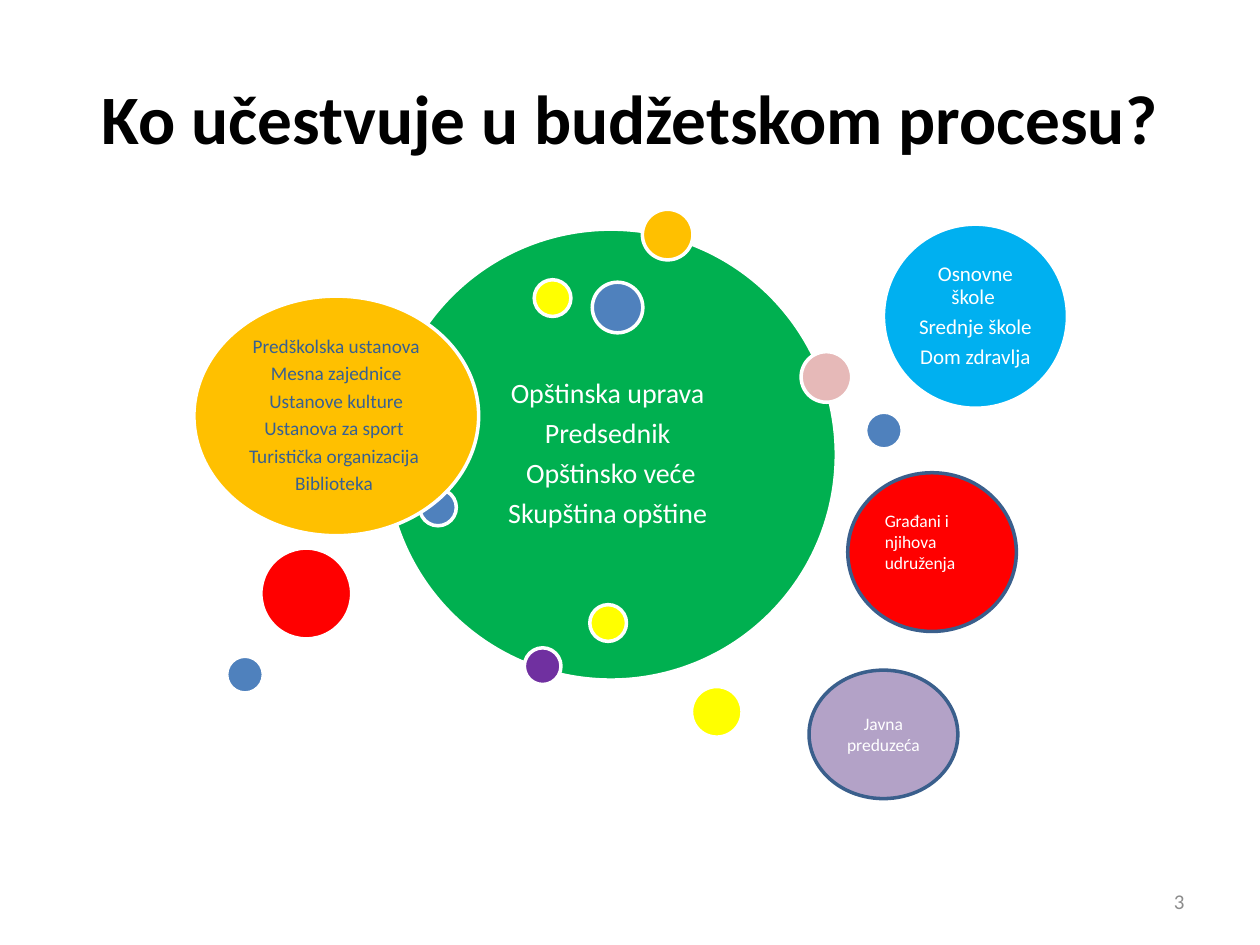
from pptx import Presentation
from pptx import util as u
from pptx.dml.color import RGBColor
from pptx.enum import shapes, text

GREEN, ORANGE, PURPLE, BLUE = "00B050", "FFC000", "7030A0", "4F81BD"
YELLOW, RED, CYAN, PINK, LILAC = "FFFF00", "FF0000", "00B0F0", "E6B9B8", "B3A2C7"
WHITE, NAVY, DARK_BLUE, GREY, BLACK = "FFFFFF", "3A5F8C", "376092", "8C8C8C", "000000"
SMALL, MEDIUM = 0.74, 1.02
CENTER, LEFT, RIGHT = text.PP_ALIGN.CENTER, text.PP_ALIGN.LEFT, text.PP_ALIGN.RIGHT


def rgb(value):
    return RGBColor.from_string(value)


def write(frame, lines, size, color, align, bold=False):
    frame.word_wrap = True
    frame.vertical_anchor = text.MSO_ANCHOR.MIDDLE
    frame.text = "\n".join(lines)
    for paragraph in frame.paragraphs:
        paragraph.alignment = align
        paragraph.font.name = "Calibri"
        paragraph.font.size = u.Pt(size)
        paragraph.font.bold = bold
        paragraph.font.color.rgb = rgb(color)


presentation = Presentation()
presentation.slide_width, presentation.slide_height = u.Cm(25.4), u.Cm(19.05)
slide = presentation.slides.add_slide(presentation.slide_layouts[5])

title = slide.shapes.title
title.left, title.top, title.width, title.height = u.Cm(1.27), u.Cm(0.76), u.Cm(22.86), u.Cm(3.18)
write(title.text_frame, ["Ko učestvuje u budžetskom procesu?"], 39.6, BLACK, CENTER, True)

number = slide.shapes.add_textbox(u.Cm(18.21), u.Cm(17.65), u.Cm(5.92), u.Cm(1.02))
write(number.text_frame, ["3"], 12, GREY, RIGHT)

administration = ["Opštinska uprava ", "Predsednik ", "Opštinsko veće", "Skupština opštine "]
institutions = ["Predškolska ustanova", "Mesna zajednice", "Ustanove kulture",
                "Ustanova za sport ", "Turistička organizacija ", "Biblioteka "]
services = ["Osnovne škole ", "Srednje škole", "Dom zdravlja"]
citizens = ["Građani i njihova udruženja"]
companies = ["Javna preduzeća"]

circles = [
    (7.77, 4.62, 9.09, 9.09, GREEN, WHITE, administration),
    (12.95, 4.22, MEDIUM, MEDIUM, ORANGE, WHITE, None),
    (10.57, 13.06, SMALL, SMALL, PURPLE, WHITE, None),
    (17.45, 8.31, SMALL, SMALL, BLUE, WHITE, None),
    (13.94, 13.84, MEDIUM, MEDIUM, YELLOW, WHITE, None),
    (10.77, 5.64, SMALL, SMALL, YELLOW, WHITE, None),
    (8.46, 9.86, SMALL, SMALL, BLUE, WHITE, None),
    (3.91, 5.97, 5.74, 4.83, ORANGE, WHITE, institutions),
    (11.94, 5.69, MEDIUM, MEDIUM, BLUE, WHITE, None),
    (5.26, 11.05, 1.83, 1.83, RED, WHITE, None),
    (17.81, 4.52, 3.71, 3.71, CYAN, WHITE, services),
    (16.15, 7.09, MEDIUM, MEDIUM, PINK, WHITE, None),
    (4.57, 13.23, SMALL, SMALL, BLUE, WHITE, None),
    (11.89, 12.19, SMALL, SMALL, YELLOW, WHITE, None),
    (17.09, 9.53, 3.4, 3.2, RED, NAVY, citizens),
    (16.31, 13.51, 3, 2.59, LILAC, NAVY, companies),
]
labels = {}
for left, top, width, height, fill, outline, lines in circles:
    circle = slide.shapes.add_shape(
        shapes.MSO_SHAPE.OVAL, u.Cm(left), u.Cm(top), u.Cm(width), u.Cm(height))
    circle.shadow.inherit = False
    circle.fill.solid()
    circle.fill.fore_color.rgb = rgb(fill)
    circle.line.color.rgb = rgb(outline)
    circle.line.width = u.Pt(2)
    if lines:
        labels[lines[0]] = circle.text_frame

for lines, size, color, inset in [
    (administration, 16, WHITE, 0.18),
    (institutions, 11, DARK_BLUE, 0.13),
    (services, 12, WHITE, 0.13),
]:
    frame = labels[lines[0]]
    write(frame, lines, size, color, CENTER)
    frame.margin_left = frame.margin_right = u.Cm(inset)
    frame.margin_top = frame.margin_bottom = u.Cm(inset)
    for paragraph in frame.paragraphs:
        paragraph.line_spacing = 0.9
        paragraph.space_after = u.Pt(0.35 * size)

write(labels[citizens[0]], citizens, 10, WHITE, LEFT)
labels[citizens[0]].margin_bottom = u.Cm(0.55)
write(labels[companies[0]], companies, 10, WHITE, CENTER)

presentation.save("out.pptx")
